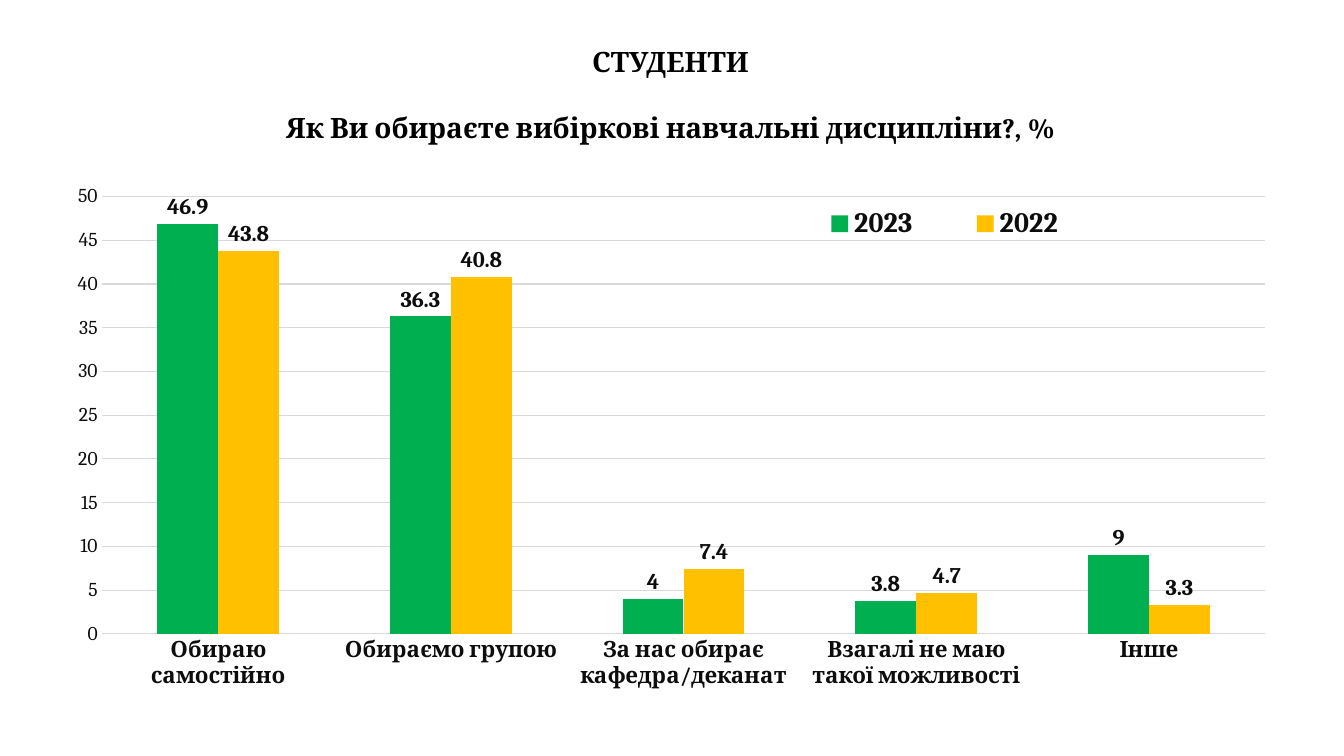
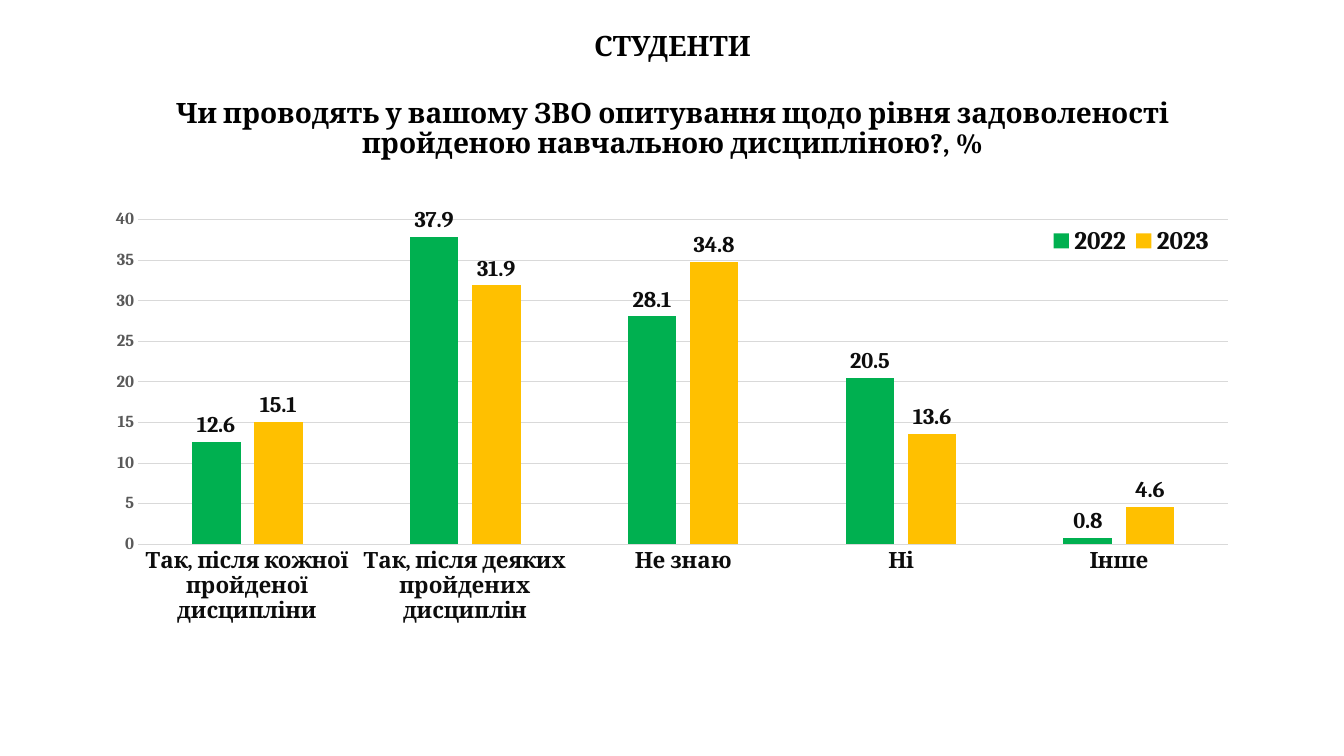
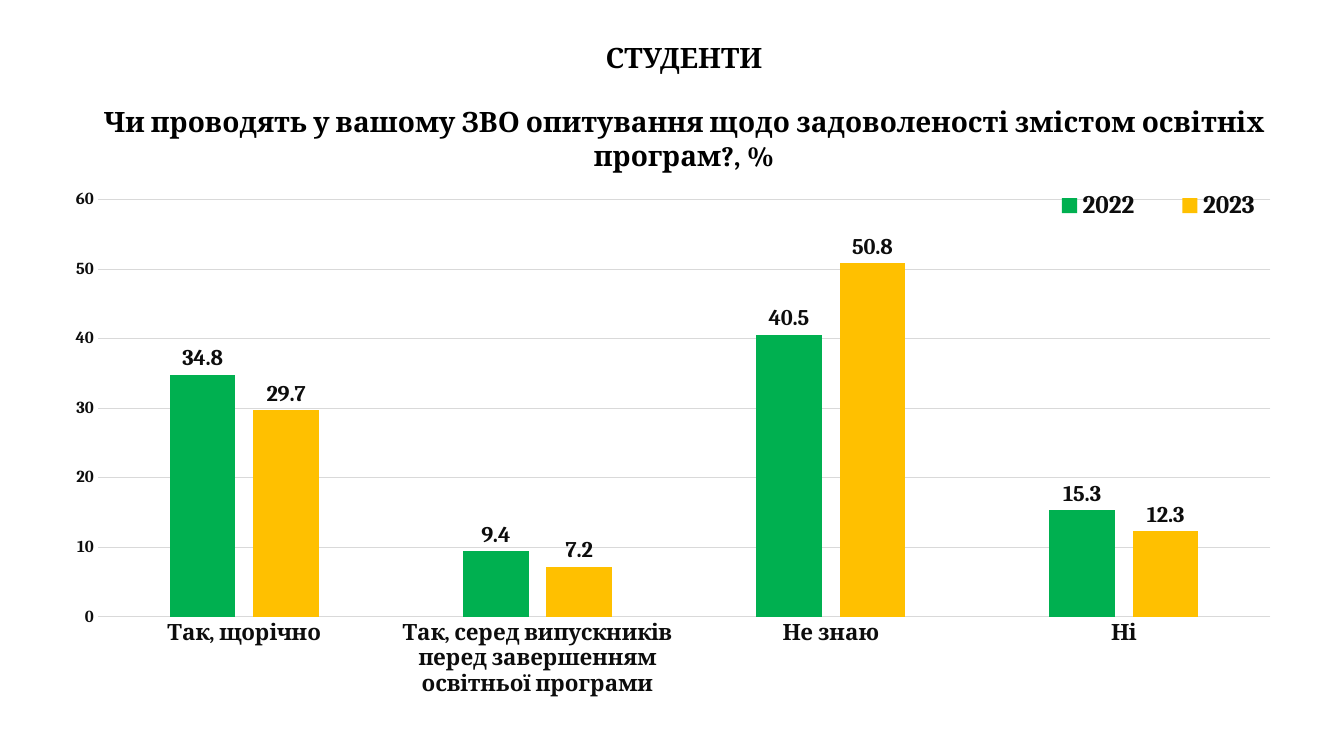
from lxml import etree
from pptx import Presentation
from pptx.chart.data import CategoryChartData
from pptx.dml.color import RGBColor
from pptx.enum import chart as ch, text as tx
from pptx.oxml import ns
from pptx.util import Inches, Pt

HUES = {"ink": "0D0D0D", "black": "000000", "gray": "595959",
        "grid": "D9D9D9", "green": "00B050", "gold": "FFC000"}
FACE = "Cambria"
HEAD = "СТУДЕНТИ"

# Boxes are left, top, width, height in inches on the slide.
PAGES = [
    {"ask": "Як Ви обираєте вибіркові навчальні дисципліни?, %",
     "title": (0.9, 0.23, 11.5, 1.45), "lead": 0.9, "skip": 26,
     "chart": (0.56, 1.71, 12.18, 5.79), "plot": (1.01, 1.95, 11.54, 4.34),
     "key": (7.7, 2.02, 3.34, 0.4), "key_size": 20,
     "axis": (14, False, "ink"), "top": 50, "step": 5, "gap": 182, "lap": 0,
     "cats": ["Обираю самостійно", "Обираємо групою",
              "За нас обирає кафедра/деканат",
              "Взагалі не маю такої можливості", "Інше"],
     "rows": {"2023": (46.9, 36.3, 4, 3.8, 9),
              "2022": (43.8, 40.8, 7.4, 4.7, 3.3)}},
    {"ask": "Чи проводять у вашому ЗВО опитування щодо рівня задоволеності "
            "пройденою навчальною дисципліною?, %",
     "title": (0.92, 0.23, 11.5, 1.45), "lead": 0.9, "skip": 26,
     "chart": (0.92, 2, 11.5, 4.76), "plot": (1.37, 2.18, 10.81, 3.22),
     "key": (10.35, 2.19, 1.74, 0.4), "key_size": 18,
     "axis": (12, True, "gray"), "top": 40, "step": 5, "gap": 219, "lap": -27,
     "cats": ["Так, після кожної пройденої дисципліни",
              "Так, після деяких пройдених дисциплін",
              "Не знаю", "Ні", "Інше"],
     "rows": {"2022": (12.6, 37.9, 28.1, 20.5, 0.8),
              "2023": (15.1, 31.9, 34.8, 13.6, 4.6)}},
    {"ask": "Чи проводять у вашому ЗВО опитування щодо задоволеності "
            "змістом освітніх програм?, %",
     "title": (0.43, 0.33, 12.71, 1.45), "lead": 1.0, "skip": 22,
     "chart": (0.5, 1.78, 12.34, 5.72), "plot": (0.97, 1.98, 11.63, 4.14),
     "key": (10.14, 1.84, 2.77, 0.4), "key_size": 18,
     "axis": (12, True, "ink"), "top": 60, "step": 10, "gap": 219, "lap": -27,
     "cats": ["Так, щорічно",
              "Так, серед випускників перед завершенням освітньої програми",
              "Не знаю", "Ні"],
     "rows": {"2022": (34.8, 9.4, 40.5, 15.3),
              "2023": (29.7, 7.2, 50.8, 12.3)}},
]


def style(font, size, bold=True, hue="ink"):
    font.name, font.size, font.bold = FACE, Pt(size), bold
    font.color.rgb = RGBColor.from_string(HUES[hue])


def place(node, at, box, frame, inner=False):
    """Fix a chart part at a slide box, as shares of the chart frame."""
    for old in node.findall(ns.qn("c:layout")):
        node.remove(old)
    lay = etree.Element(ns.qn("c:layout"))
    man = etree.SubElement(lay, ns.qn("c:manualLayout"))
    x, y, w, h = box
    fx, fy, fw, fh = frame
    vals = {"xMode": "edge", "yMode": "edge", "x": (x - fx) / fw,
            "y": (y - fy) / fh, "w": w / fw, "h": h / fh}
    if inner:
        vals = {"layoutTarget": "inner", **vals}
    for tag, val in vals.items():
        etree.SubElement(man, ns.qn("c:" + tag)).set("val", str(val))
    node.insert(at, lay)


prs = Presentation()
prs.slide_width, prs.slide_height = Inches(13.33), Inches(7.5)

for page in PAGES:
    slide = prs.slides.add_slide(prs.slide_layouts[5])

    title = slide.shapes.title
    title.left, title.top, title.width, title.height = map(Inches, page["title"])
    frame = title.text_frame
    frame.text = HEAD + "\n" + page["ask"]
    frame.word_wrap = True
    frame.auto_size = tx.MSO_AUTO_SIZE.NONE
    frame.vertical_anchor = tx.MSO_ANCHOR.MIDDLE
    for para in frame.paragraphs:
        para.alignment = tx.PP_ALIGN.CENTER
        para.line_spacing = page["lead"]
        style(para.font, 20, hue="black")
    frame.paragraphs[1].space_before = Pt(page["skip"])

    data = CategoryChartData()
    data.categories = page["cats"]
    for name, vals in page["rows"].items():
        data.add_series(name, vals)
    chart = slide.shapes.add_chart(ch.XL_CHART_TYPE.COLUMN_CLUSTERED,
                                   *map(Inches, page["chart"]), data).chart
    chart.has_title = False
    chart.font.name, chart.font.size = "Calibri", Pt(10)

    plot = chart.plots[0]
    plot.vary_by_categories = False
    plot.gap_width, plot.overlap = page["gap"], page["lap"]
    for row, hue in zip(plot.series, ("green", "gold")):
        row.format.fill.solid()
        row.format.fill.fore_color.rgb = RGBColor.from_string(HUES[hue])
        tags = row.data_labels
        tags.show_value = True
        tags.position = ch.XL_LABEL_POSITION.OUTSIDE_END
        style(tags.font, 16)

    cat, val = chart.category_axis, chart.value_axis
    val.minimum_scale, val.maximum_scale = 0, page["top"]
    val.major_unit = page["step"]
    val.has_major_gridlines = True
    for axis in (cat, val):
        axis.major_tick_mark = axis.minor_tick_mark = ch.XL_TICK_MARK.NONE
    for line in (cat.format.line, val.major_gridlines.format.line):
        line.color.rgb = RGBColor.from_string(HUES["grid"])
        line.width = Pt(0.75)
    val.format.line.fill.background()
    style(cat.tick_labels.font, 16)
    style(val.tick_labels.font, *page["axis"])

    chart.has_legend = True
    key = chart.legend
    key.position = ch.XL_LEGEND_POSITION.BOTTOM
    key.include_in_layout = False
    style(key.font, page["key_size"])

    root = chart.element
    place(root.find(".//" + ns.qn("c:plotArea")), 0,
          page["plot"], page["chart"], inner=True)
    place(root.find(".//" + ns.qn("c:legend")), 1,
          page["key"], page["chart"])

prs.save("out.pptx")
